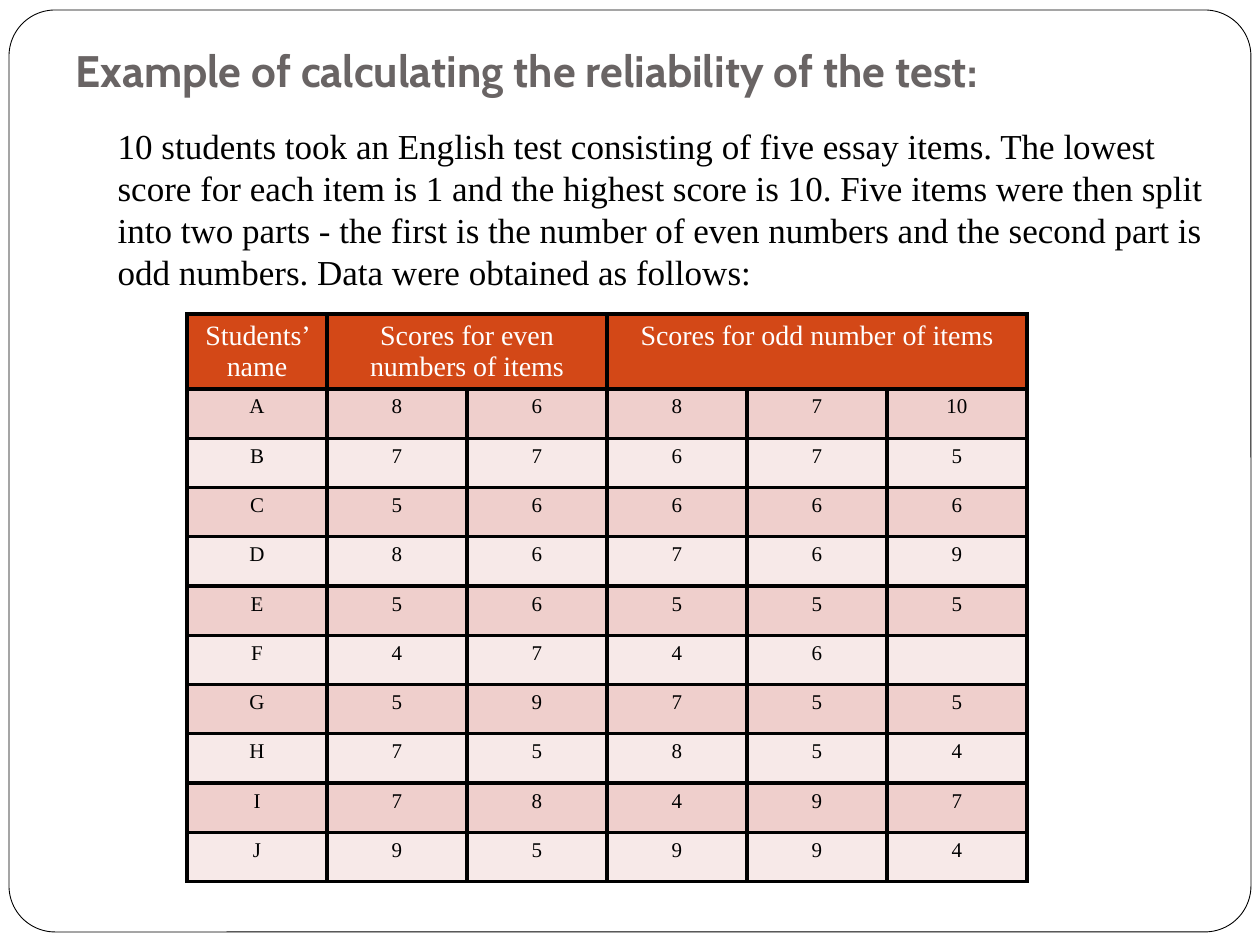
from lxml import etree
from pptx import Presentation
from pptx import util as u
from pptx.dml.color import RGBColor
from pptx.enum import shapes, text
from pptx.oxml.ns import qn

BLACK = RGBColor(0, 0, 0)
WHITE = RGBColor(255, 255, 255)
GREY = RGBColor(0x69, 0x64, 0x64)
ORANGE = RGBColor(0xD3, 0x48, 0x17)
BANDS = [RGBColor(0xEF, 0xCF, 0xCC), RGBColor(0xF7, 0xE9, 0xE8)]

TITLE = "Example of calculating the reliability of the test:"
INTRODUCTION = (
    "10 students took an English test consisting of five essay items. "
    "The lowest score for each item is 1 and the highest score is 10. "
    "Five items were then split into two parts - the first is the number of "
    "even numbers and the second part is odd numbers. "
    "Data were obtained as follows:"
)
# Heading text, first column and last column
HEADINGS = [
    ("Students’ name", 0, 0),
    ("Scores for even numbers of items", 1, 2),
    ("Scores for odd number of items", 3, 5),
]
SCORES = [
    ("A", 8, 6, 8, 7, 10),
    ("B", 7, 7, 6, 7, 5),
    ("C", 5, 6, 6, 6, 6),
    ("D", 8, 6, 7, 6, 9),
    ("E", 5, 6, 5, 5, 5),
    ("F", 4, 7, 4, 6, ""),
    ("G", 5, 9, 7, 5, 5),
    ("H", 7, 5, 8, 5, 4),
    ("I", 7, 8, 4, 9, 7),
    ("J", 9, 5, 9, 9, 4),
]


def px(length):
    return u.Emu(round(length * 914400 / 126))


class SlideBuilder:
    serif = "Times New Roman"
    sans = "Cabin"

    def __init__(self, slide):
        self.slide = slide

    def style(self, paragraph, font_name, size, color, bold=False):
        for run in paragraph.runs:
            run.font.name = font_name
            run.font.size = u.Pt(size)
            run.font.bold = bold
            run.font.color.rgb = color

    def frame(self, left, top, width, height):
        shape = self.slide.shapes.add_shape(
            shapes.MSO_SHAPE.ROUNDED_RECTANGLE,
            px(left), px(top), px(width), px(height))
        shape.adjustments[0] = 0.05
        shape.shadow.inherit = False
        shape.fill.solid()
        shape.fill.fore_color.rgb = WHITE
        shape.line.color.rgb = BLACK
        shape.line.width = u.Pt(0.5)
        # Behind the placeholders
        shape.element.getparent().insert(2, shape.element)

    def placeholder(self, index, content, left, top, width, height):
        shape = self.slide.placeholders[index]
        shape.left, shape.top = px(left), px(top)
        shape.width, shape.height = px(width), px(height)
        text_frame = shape.text_frame
        text_frame.text = content
        text_frame.word_wrap = True
        text_frame.auto_size = text.MSO_AUTO_SIZE.NONE
        paragraph = text_frame.paragraphs[0]
        paragraph.alignment = text.PP_ALIGN.LEFT
        return text_frame, paragraph

    def title(self, content, *box):
        text_frame, paragraph = self.placeholder(0, content, *box)
        text_frame.vertical_anchor = text.MSO_ANCHOR.BOTTOM
        text_frame.margin_bottom = u.Inches(0.1)
        self.style(paragraph, self.sans, 25.2, GREY, bold=True)

    def body(self, content, *box):
        paragraph = self.placeholder(1, content, *box)[1]
        paragraph.space_before = u.Pt(5.8)
        paragraph.line_spacing = u.Pt(24)
        properties = paragraph._p.get_or_add_pPr()
        properties.set("marL", "0")
        properties.set("indent", "0")
        etree.SubElement(properties, qn("a:buNone"))
        self.style(paragraph, self.serif, 20, BLACK)

    def borders(self, cell):
        properties = cell._tc.get_or_add_tcPr()
        for position, side in enumerate(("lnL", "lnR", "lnT", "lnB")):
            line = etree.Element(qn(f"a:{side}"), w=str(u.Pt(2.25)))
            fill = etree.SubElement(line, qn("a:solidFill"))
            etree.SubElement(fill, qn("a:srgbClr"), val=str(BLACK))
            properties.insert(position, line)

    def cell_text(self, cell, content, size, color):
        paragraph = cell.text_frame.paragraphs[0]
        paragraph.text = content
        paragraph.alignment = text.PP_ALIGN.CENTER
        self.style(paragraph, self.serif, size, color)
        if not content:
            # Keeps an empty cell from stretching its row
            etree.SubElement(paragraph._p, qn("a:endParaRPr"), sz=str(size * 100))

    def table(self, headings, rows, left, top, width, header_height, rows_height):
        column_count = len(rows[0])
        table = self.slide.shapes.add_table(
            len(rows) + 1, column_count, px(left), px(top),
            px(width), px(header_height + rows_height)).table
        for column in table.columns:
            column.width = px(width / column_count)
        for row in table.rows:
            row.height = px(rows_height / len(rows))
        table.rows[0].height = px(header_height)

        # Fills and borders
        for row_index, row in enumerate(table.rows):
            for cell in row.cells:
                cell.fill.solid()
                cell.fill.fore_color.rgb = (
                    BANDS[(row_index - 1) % 2] if row_index else ORANGE)
                self.borders(cell)

        # Headings and scores
        for content, first, last in headings:
            cell = table.cell(0, first)
            if last > first:
                cell.merge(table.cell(0, last))
            self.cell_text(cell, content, 16, WHITE)
        for row_index, values in enumerate(rows, start=1):
            for column_index, value in enumerate(values):
                self.cell_text(table.cell(row_index, column_index),
                               str(value), 12, BLACK)


def main():
    presentation = Presentation()
    presentation.slide_width, presentation.slide_height = px(1260), px(945)
    slide = presentation.slides.add_slide(presentation.slide_layouts[1])
    builder = SlideBuilder(slide)
    builder.frame(9, 10, 1242, 922)
    builder.title(TITLE, 63, 38, 1134, 71)
    builder.body(INTRODUCTION, 105, 118, 1134, 709)
    builder.table(HEADINGS, SCORES, 187, 314, 840, 75, 493)
    presentation.save("out.pptx")


if __name__ == "__main__":
    main()
